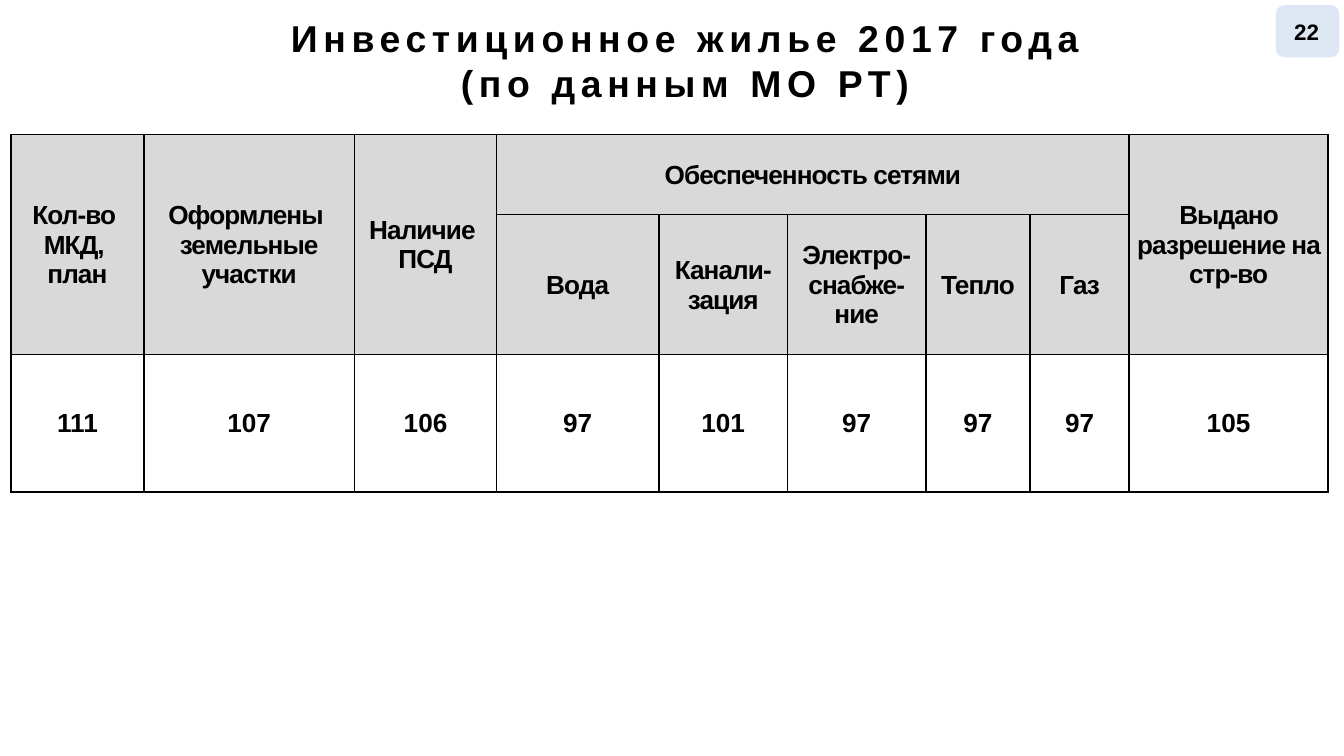
"""Build a slide with a table of investment housing and its utility networks."""
from dataclasses import dataclass

import pptx
import pptx.dml.color
import pptx.enum.shapes
import pptx.enum.text
import pptx.oxml
import pptx.oxml.ns
import pptx.util

Pt = pptx.util.Pt
RGBColor = pptx.dml.color.RGBColor
MIDDLE = pptx.enum.text.MSO_ANCHOR.MIDDLE

BLACK = RGBColor(0x00, 0x00, 0x00)
WHITE = RGBColor(0xFF, 0xFF, 0xFF)
GREY = RGBColor(0xD9, 0xD9, 0xD9)
PALE_BLUE = RGBColor(0xDD, 0xE7, 0xF3)

COLUMN_WIDTHS = (71, 113, 76, 87, 69, 74, 56, 53, 106.5)
ROW_HEIGHTS = (43, 75, 73.5)
COUNTS = (111, 107, 106, 97, 101, 97, 97, 97, 105)


@dataclass(frozen=True)
class Heading:
    text: str
    row: int
    column: int
    rows: int = 1
    columns: int = 1


HEADINGS = (
    Heading("Кол-во \nМКД, \nплан", 0, 0, rows=2),
    Heading("Оформлены \nземельные\nучастки", 0, 1, rows=2),
    Heading("Наличие \nПСД", 0, 2, rows=2),
    Heading("Обеспеченность сетями", 0, 3, columns=5),
    Heading("Выдано разрешение на стр-во", 0, 8, rows=2),
    Heading("Вода", 1, 3),
    Heading("Канали-\nзация", 1, 4),
    Heading("Электро-\nснабже-\nние", 1, 5),
    Heading("Тепло", 1, 6),
    Heading("Газ", 1, 7),
)


def write(frame, text: str, *, size: float, spacing: float = 0) -> None:
    """Fill a text frame with centred bold paragraphs, one for each line."""
    for index, line in enumerate(text.split("\n")):
        para = frame.add_paragraph() if index else frame.paragraphs[0]
        para.alignment = pptx.enum.text.PP_ALIGN.CENTER
        span = para.add_run()
        span.text = line
        span.font.name = "Arial"
        span.font.size = Pt(size)
        span.font.bold = True
        span.font.color.rgb = BLACK
        if spacing:
            span.font._element.set("spc", str(round(spacing * 100)))


def style_cell(cell, fill: RGBColor) -> None:
    """Give a cell its fill, narrow margins and thin border."""
    cell.fill.solid()
    cell.fill.fore_color.rgb = fill
    cell.vertical_anchor = MIDDLE
    cell.margin_left = cell.margin_right = cell.margin_top = Pt(0.7)
    cell.margin_bottom = Pt(0)
    properties = cell._tc.get_or_add_tcPr()
    for index, side in enumerate("LRTB"):
        border = pptx.oxml.parse_xml(
            f'<a:ln{side} {pptx.oxml.ns.nsdecls("a")} w="{Pt(1)}"><a:solidFill>'
            f'<a:srgbClr val="{BLACK}"/></a:solidFill></a:ln{side}>'
        )
        properties.insert(index, border)


def add_title(page, text: str) -> None:
    """Add the widely spaced title."""
    box = page.shapes.add_textbox(Pt(48), Pt(4.5), Pt(638), Pt(55.5))
    box.text_frame.word_wrap = True
    write(box.text_frame, text, size=20, spacing=3)


def add_housing_table(page) -> None:
    """Add the table with merged headings and one row of counts."""
    table = page.shapes.add_table(
        len(ROW_HEIGHTS), len(COLUMN_WIDTHS), Pt(6), Pt(72),
        Pt(sum(COLUMN_WIDTHS)), Pt(sum(ROW_HEIGHTS)),
    ).table
    for column, width in zip(table.columns, COLUMN_WIDTHS):
        column.width = Pt(width)
    last = len(ROW_HEIGHTS) - 1
    for index, height in enumerate(ROW_HEIGHTS):
        table.rows[index].height = Pt(height)
        for cell in table.rows[index].cells:
            style_cell(cell, WHITE if index == last else GREY)
    for heading in HEADINGS:
        cell = table.cell(heading.row, heading.column)
        if heading.rows > 1 or heading.columns > 1:
            cell.merge(table.cell(heading.row + heading.rows - 1,
                                  heading.column + heading.columns - 1))
        write(cell.text_frame, heading.text, size=14, spacing=-0.5)
    for column, count in enumerate(COUNTS):
        write(table.cell(last, column).text_frame, str(count), size=14)


def add_page_number(page, number: int) -> None:
    """Add the page number on a rounded badge."""
    badge = page.shapes.add_shape(
        pptx.enum.shapes.MSO_SHAPE.ROUNDED_RECTANGLE,
        Pt(683.5), Pt(2.75), Pt(34), Pt(28),
    )
    badge.shadow.inherit = False
    badge.fill.solid()
    badge.fill.fore_color.rgb = PALE_BLUE
    badge.line.fill.background()
    frame = badge.text_frame
    frame.vertical_anchor = MIDDLE
    frame.margin_left = Pt(6)
    write(frame, str(number), size=12)


def main() -> None:
    """Build and save the deck."""
    deck = pptx.Presentation()
    deck.slide_width, deck.slide_height = Pt(720), Pt(405)
    page = deck.slides.add_slide(deck.slide_layouts[6])
    add_title(page, "Инвестиционное жилье 2017 года\n(по данным МО РТ)")
    add_housing_table(page)
    add_page_number(page, 22)
    deck.save("out.pptx")


if __name__ == "__main__":
    main()
